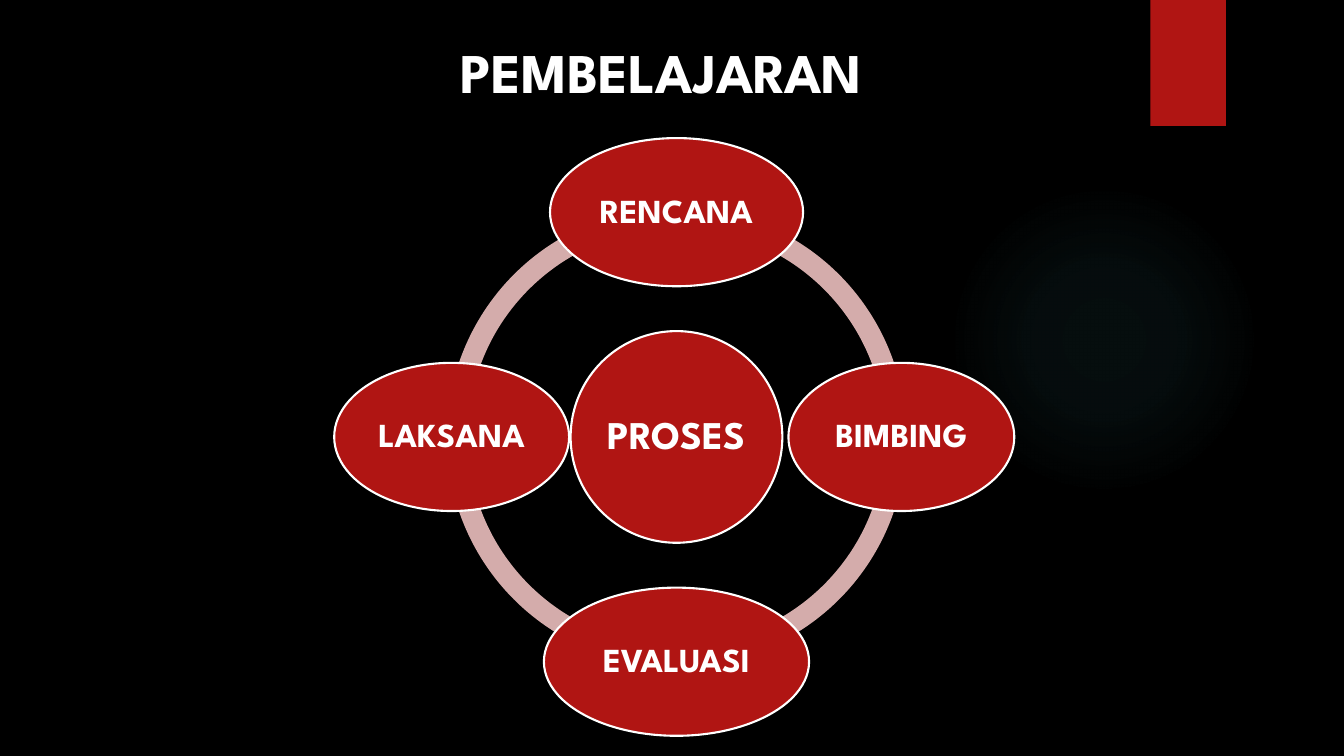
import math
from dataclasses import dataclass

import lxml.etree
import pptx
import pptx.dml.color
import pptx.enum.shapes
import pptx.enum.text
import pptx.oxml
import pptx.oxml.ns
import pptx.shapes.autoshape
import pptx.slide
import pptx.text.text
import pptx.util

Inches = pptx.util.Inches
Pt = pptx.util.Pt
RGBColor = pptx.dml.color.RGBColor
ShapeKind = pptx.enum.shapes.MSO_SHAPE

BLACK = RGBColor(0x00, 0x00, 0x00)
WHITE = RGBColor(0xFF, 0xFF, 0xFF)
RED = RGBColor(0xB0, 0x15, 0x13)
PINK = RGBColor(0xD4, 0xAC, 0xAB)
GLOW = RGBColor(0x50, 0xB9, 0xC1)
FONT = "League Spartan"

CENTER_X, CENTER_Y = 6.71, 4.335
ORBIT_RADIUS = 2.23
RING_SIZE = 4.56
RING_THICKNESS = 0.046
QUARTER_TURN = 54  # 90 degrees in adjustment units
GLOW_STOPS = ((0, 7), (36, 6), (69, 0))  # position and opacity in percent


@dataclass(frozen=True)
class Node:
    label: str
    width: float
    height: float
    size: int
    inset: float
    angle: int = 0
    orbit: float = ORBIT_RADIUS


NODES = (
    Node("PROSES", 2.1, 2.1, 28, 0.04, orbit=0),
    Node("RENCANA", 2.51, 1.47, 24, 0.03, angle=-90),
    Node("BIMBING", 2.24, 1.47, 24, 0.03, angle=0),
    Node("EVALUASI", 2.63, 1.47, 24, 0.03, angle=90),
    Node("LAKSANA", 2.33, 1.47, 24, 0.03, angle=180),
)


def add_plain_shape(
    slide: pptx.slide.Slide,
    kind: ShapeKind,
    left: float,
    top: float,
    width: float,
    height: float,
    color: RGBColor,
) -> pptx.shapes.autoshape.Shape:
    """Add a filled shape without outline or shadow."""
    shape = slide.shapes.add_shape(
        kind, Inches(left), Inches(top), Inches(width), Inches(height)
    )
    shape.shadow.inherit = False
    shape.fill.solid()
    shape.fill.fore_color.rgb = color
    shape.line.fill.background()
    return shape


def add_run(
    paragraph: pptx.text.text._Paragraph, text: str, size: int
) -> None:
    run = paragraph.add_run()
    run.text = text
    run.font.name = FONT
    run.font.size = Pt(size)
    run.font.bold = True
    run.font.color.rgb = WHITE


def add_glow(slide: pptx.slide.Slide) -> None:
    """Add the faint radial light at the right."""
    shape = add_plain_shape(slide, ShapeKind.OVAL, 9.41, 1.83, 3.08, 3.08, GLOW)
    stops = "".join(
        f'<a:gs pos="{position * 1000}"><a:srgbClr val="{GLOW}">'
        f'<a:alpha val="{opacity * 1000}"/></a:srgbClr></a:gs>'
        for position, opacity in GLOW_STOPS
    )
    gradient = pptx.oxml.parse_xml(
        f'<a:gradFill {pptx.oxml.ns.nsdecls("a")}><a:gsLst>{stops}</a:gsLst>'
        '<a:path path="circle"><a:fillToRect l="50000" t="50000" '
        'r="50000" b="50000"/></a:path></a:gradFill>'
    )
    properties = shape.element.spPr
    solid_fill = properties.find(pptx.oxml.ns.qn("a:solidFill"))
    properties.replace(solid_fill, gradient)


def add_title(slide: pptx.slide.Slide) -> None:
    box = slide.shapes.add_textbox(
        Inches(4.47), Inches(0.32), Inches(4.43), Inches(0.77)
    )
    frame = box.text_frame
    frame.word_wrap = False
    frame.auto_size = pptx.enum.text.MSO_AUTO_SIZE.SHAPE_TO_FIT_TEXT
    add_run(frame.paragraphs[0], "PEMBELAJARAN", 40)


def add_ring(slide: pptx.slide.Slide) -> None:
    """Add four quarter arcs that close into a ring."""
    for quarter in range(4):
        arc = add_plain_shape(
            slide,
            ShapeKind.BLOCK_ARC,
            CENTER_X - RING_SIZE / 2,
            CENTER_Y - RING_SIZE / 2,
            RING_SIZE,
            RING_SIZE,
            PINK,
        )
        arc.adjustments[0] = quarter * QUARTER_TURN
        arc.adjustments[1] = (quarter + 1) % 4 * QUARTER_TURN
        arc.adjustments[2] = RING_THICKNESS


def add_node(slide: pptx.slide.Slide, node: Node) -> None:
    angle = math.radians(node.angle)
    left = CENTER_X + node.orbit * math.cos(angle) - node.width / 2
    top = CENTER_Y + node.orbit * math.sin(angle) - node.height / 2
    shape = add_plain_shape(
        slide, ShapeKind.OVAL, left, top, node.width, node.height, RED
    )
    shape.line.color.rgb = WHITE
    shape.line.width = Pt(1.5)

    frame = shape.text_frame
    frame.word_wrap = True
    frame.vertical_anchor = pptx.enum.text.MSO_ANCHOR.MIDDLE
    frame.margin_left = frame.margin_right = Inches(node.inset)
    frame.margin_top = frame.margin_bottom = Inches(node.inset)
    paragraph = frame.paragraphs[0]
    paragraph.alignment = pptx.enum.text.PP_ALIGN.CENTER
    paragraph.line_spacing = 0.9
    add_run(paragraph, node.label, node.size)


def main() -> None:
    presentation = pptx.Presentation()
    presentation.slide_width = Inches(13.33)
    presentation.slide_height = Inches(7.5)
    slide = presentation.slides.add_slide(presentation.slide_layouts[6])
    slide.background.fill.solid()
    slide.background.fill.fore_color.rgb = BLACK

    add_glow(slide)
    add_plain_shape(slide, ShapeKind.RECTANGLE, 11.41, 0, 0.75, 1.25, RED)
    add_title(slide)
    add_ring(slide)
    for node in NODES:
        add_node(slide, node)
    presentation.save("out.pptx")


if __name__ == "__main__":
    main()
